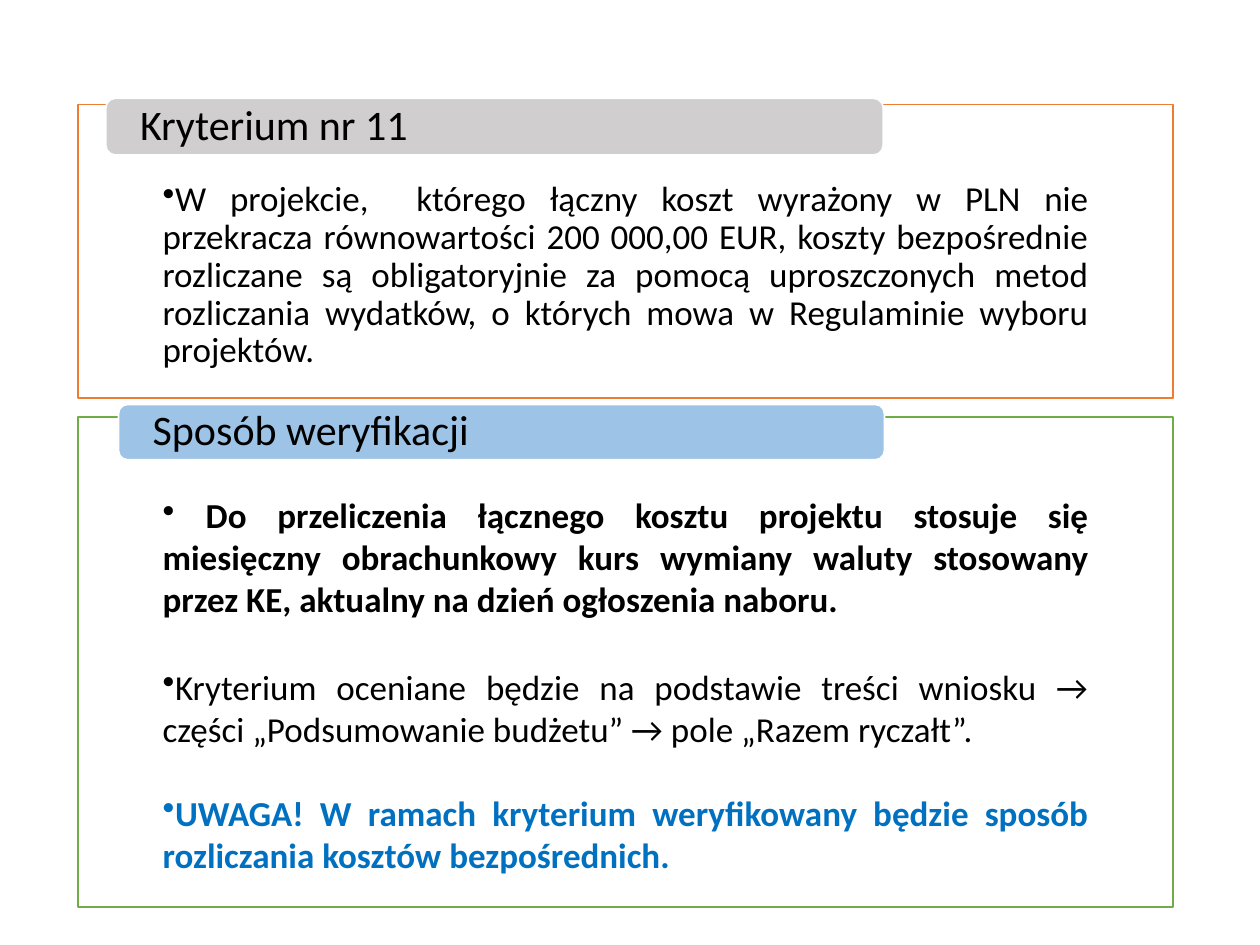
from dataclasses import dataclass

from pptx import Presentation
from pptx.dml.color import RGBColor
from pptx.enum.shapes import MSO_SHAPE as Shape
from pptx.enum.text import MSO_ANCHOR as Anchor, PP_ALIGN as Align
from pptx.oxml.ns import qn
from pptx.util import Inches, Pt

COLORS = {
    "white": "FFFFFF", "black": "000000", "orange": "ED7D31", "green": "70AD47",
    "gray": "D0CECE", "light_blue": "9DC3E6", "blue": "0070C0",
}
FONT = "Calibri"


@dataclass
class Bullet:
    text: str
    bold: bool = False
    color: str = "black"
    space_before: float = 0
    line_spacing: float = 1.0


@dataclass
class Box:
    kind: Shape
    left: float
    top: float
    width: float
    height: float
    fill: str
    line: str


@dataclass
class Section:
    panel: Box
    header: Box
    title: str
    bullets: list[Bullet]


SECTIONS = [
    Section(
        Box(Shape.RECTANGLE, 0.62, 0.83, 8.69, 2.33, "white", "orange"),
        Box(Shape.ROUNDED_RECTANGLE, 0.84, 0.78, 6.17, 0.45, "gray", "white"),
        "Kryterium nr 11",
        [Bullet("W projekcie,  którego łączny koszt wyrażony w PLN nie przekracza "
                "równowartości 200 000,00 EUR, koszty bezpośrednie rozliczane są "
                "obligatoryjnie za pomocą uproszczonych metod rozliczania wydatków, "
                "o których mowa w Regulaminie wyboru projektów.", line_spacing=0.9)],
    ),
    Section(
        Box(Shape.RECTANGLE, 0.62, 3.31, 8.69, 3.89, "white", "green"),
        Box(Shape.FLOWCHART_ALTERNATE_PROCESS, 0.94, 3.21, 6.08, 0.44,
            "light_blue", "white"),
        "Sposób weryfikacji",
        [Bullet(" Do przeliczenia łącznego kosztu projektu stosuje się miesięczny "
                "obrachunkowy kurs wymiany waluty stosowany przez KE, aktualny na "
                "dzień ogłoszenia naboru.", bold=True),
         Bullet("Kryterium oceniane będzie na podstawie treści wniosku → części "
                "„Podsumowanie budżetu” → pole „Razem ryczałt”.", space_before=26),
         Bullet("UWAGA! W ramach kryterium weryfikowany będzie sposób rozliczania "
                "kosztów bezpośrednich.", bold=True, color="blue", space_before=24)],
    ),
]


def rgb(name: str) -> RGBColor:
    return RGBColor.from_string(COLORS[name])


def set_attributes(target, values: dict) -> None:
    for name, value in values.items():
        setattr(target, name, value)


def add_box(slide, box: Box, anchor: Anchor, insets: tuple[float, ...]):
    """Draw the box and return its text frame; insets are left, top, right, bottom."""
    bounds = (Inches(n) for n in (box.left, box.top, box.width, box.height))
    shape = slide.shapes.add_shape(box.kind, *bounds)
    shape.shadow.inherit = False
    shape.fill.solid()
    shape.fill.fore_color.rgb = rgb(box.fill)
    shape.line.color.rgb = rgb(box.line)
    shape.line.width = Pt(1)
    sides = ("margin_left", "margin_top", "margin_right", "margin_bottom")
    set_attributes(shape.text_frame, {
        "word_wrap": True, "vertical_anchor": anchor,
        **{side: Inches(inset) for side, inset in zip(sides, insets)},
    })
    return shape.text_frame


def write(paragraph, text: str, size: float, bold: bool, color: str) -> None:
    run = paragraph.add_run()
    run.text = text
    set_attributes(run.font, {"name": FONT, "size": Pt(size), "bold": bold})
    run.font.color.rgb = rgb(color)


def add_bullet_mark(paragraph) -> None:
    properties = paragraph._p.get_or_add_pPr()
    set_attributes_xml = {"marL": "0", "indent": "0"}
    for name, value in set_attributes_xml.items():
        properties.set(name, value)
    mark = properties.makeelement(qn("a:buChar"), {"char": "•"})
    properties.append(mark)


def add_section(slide, section: Section) -> None:
    frame = add_box(slide, section.panel, Anchor.TOP, (0.67, 0.61, 0.67, 0.16))
    for index, bullet in enumerate(section.bullets):
        paragraph = frame.add_paragraph() if index else frame.paragraphs[0]
        add_bullet_mark(paragraph)
        set_attributes(paragraph, {
            "alignment": Align.JUSTIFY, "line_spacing": bullet.line_spacing,
            "space_before": Pt(bullet.space_before),
        })
        write(paragraph, bullet.text, 20, bullet.bold, bullet.color)

    frame = add_box(slide, section.header, Anchor.MIDDLE, (0.25, 0, 0.25, 0))
    paragraph = frame.paragraphs[0]
    set_attributes(paragraph, {"alignment": Align.LEFT, "line_spacing": 0.9})
    write(paragraph, section.title, 24, False, "black")


def main() -> None:
    presentation = Presentation()
    set_attributes(presentation, {"slide_width": Inches(10), "slide_height": Inches(7.5)})
    slide = presentation.slides.add_slide(presentation.slide_layouts[6])
    for section in SECTIONS:
        add_section(slide, section)
    presentation.save("out.pptx")


if __name__ == "__main__":
    main()
